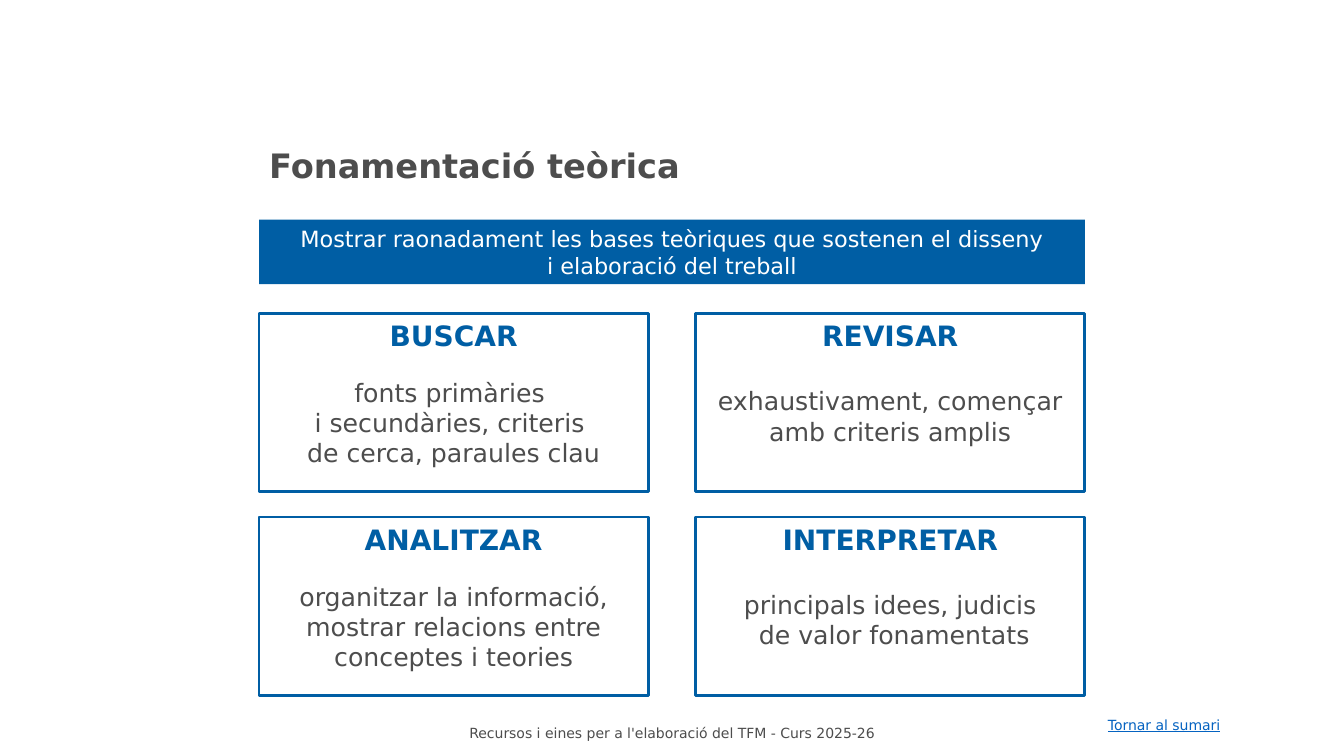
from dataclasses import dataclass
from pptx import Presentation
from pptx.dml.color import RGBColor
from pptx.enum.shapes import MSO_SHAPE
from pptx.enum.text import MSO_ANCHOR, PP_ALIGN
from pptx.util import Inches, Pt

TITLE = "Fonamentació teòrica"
BANNER = [
    "Mostrar raonadament les bases teòriques que sostenen el disseny",
    "i elaboració del treball",
]
CARDS = [
    ("BUSCAR", 18, ["fonts primàries ", "i secundàries, criteris ",
                    "de cerca, paraules clau"]),
    ("REVISAR", 24, ["exhaustivament, començar amb criteris amplis"]),
    ("ANALITZAR", 18, ["organitzar la informació, mostrar relacions entre "
                       "conceptes i teories"]),
    ("INTERPRETAR", 24, ["principals idees, judicis", " de valor fonamentats"]),
]
FOOTER = "Recursos i eines per a l'elaboració del TFM - Curs 2025-26"
BACK = "Tornar al sumari"


@dataclass(frozen=True)
class Theme:
    font: str = "DejaVu Sans"
    blue: str = "005EA4"
    gray: str = "4D4D4D"
    link: str = "0563C1"
    white: str = "FFFFFF"
    title: int = 24
    head: int = 20
    body: int = 18
    lead: int = 16
    small: int = 10


LOOK = Theme()
WIDE, HIGH = 13.33, 7.5
LEFT, TOP = 2.57, 3.11
CARD_W, CARD_H = 3.86, 1.77
STEP_X, STEP_Y = 4.33, 2.02
COLS = 2
BAND_W = STEP_X + CARD_W


def write(shape, lines, anchor=MSO_ANCHOR.MIDDLE, wrap=True):
    frame = shape.text_frame
    frame.word_wrap = wrap
    frame.vertical_anchor = anchor
    frame.text = "\n".join(line[0] for line in lines)
    for para, (_, size, color, bold, align) in zip(frame.paragraphs, lines):
        para.alignment = align
        para.space_before = Pt(0)
        font = para.font
        font.name, font.size, font.bold = LOOK.font, Pt(size), bold
        font.color.rgb = RGBColor.from_string(color)
    return frame


def block(slide, box, fill, edge=None):
    shape = slide.shapes.add_shape(MSO_SHAPE.RECTANGLE, *map(Inches, box))
    shape.shadow.inherit = False
    shape.fill.solid()
    shape.fill.fore_color.rgb = RGBColor.from_string(fill)
    if edge:
        shape.line.color.rgb = RGBColor.from_string(edge)
        shape.line.width = Pt(2)
    else:
        shape.line.fill.background()
    return shape


def label(slide, box, line, wrap=True):
    shape = slide.shapes.add_textbox(*map(Inches, box))
    return write(shape, [line], wrap=wrap)


def main():
    deck = Presentation()
    deck.slide_width, deck.slide_height = Inches(WIDE), Inches(HIGH)
    slide = deck.slides.add_slide(deck.slide_layouts[5])
    mid, left = PP_ALIGN.CENTER, PP_ALIGN.LEFT

    title = slide.shapes.title
    title.left, title.top = Inches(LEFT), Inches(1.39)
    title.width, title.height = Inches(8.35), Inches(0.5)
    write(title, [(TITLE, LOOK.title, LOOK.gray, True, left)])

    for spot, (head, gap, body) in enumerate(CARDS):
        row, col = divmod(spot, COLS)
        box = (LEFT + col * STEP_X, TOP + row * STEP_Y, CARD_W, CARD_H)
        card = block(slide, box, LOOK.white, LOOK.blue)
        lines = [(head, LOOK.head, LOOK.blue, True, mid)]
        lines += [(text, LOOK.body, LOOK.gray, False, mid) for text in body]
        frame = write(card, lines, MSO_ANCHOR.TOP)
        frame.paragraphs[0].space_after = Pt(gap)

    band = block(slide, (LEFT, 2.18, BAND_W, 0.64), LOOK.blue)
    write(band, [(text, LOOK.lead, LOOK.white, False, mid) for text in BANNER])

    label(slide, (3.75, 7.14, 5.83, 0.27),
          (FOOTER, LOOK.small, LOOK.gray, False, mid))
    back = label(slide, (10.89, 7.06, 1.36, 0.27),
                 (BACK, LOOK.small, LOOK.link, False, left), wrap=False)
    back.paragraphs[0].font.underline = True

    deck.save("out.pptx")


if __name__ == "__main__":
    main()
